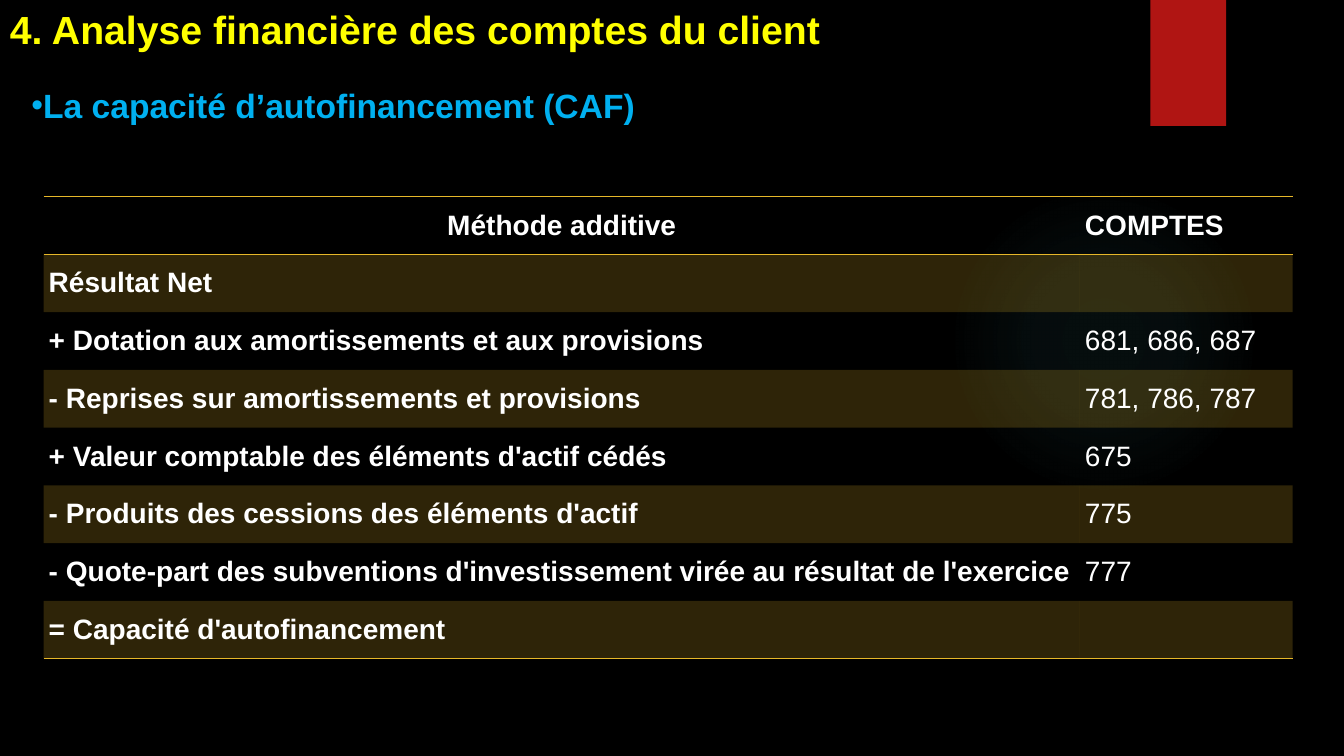
from lxml import etree
from pptx import Presentation
from pptx.dml.color import RGBColor
from pptx.enum.shapes import MSO_SHAPE
from pptx.enum.text import MSO_ANCHOR, PP_ALIGN
from pptx.oxml import parse_xml
from pptx.oxml.ns import nsdecls, qn
from pptx.util import Pt

RECTANGLE, OVAL = MSO_SHAPE.RECTANGLE, MSO_SHAPE.OVAL
MIDDLE = MSO_ANCHOR.MIDDLE
CENTER, LEFT = PP_ALIGN.CENTER, PP_ALIGN.LEFT

BLACK = RGBColor(0x00, 0x00, 0x00)
WHITE = RGBColor(0xFF, 0xFF, 0xFF)
YELLOW = RGBColor(0xFF, 0xFF, 0x00)
BLUE = RGBColor(0x00, 0xB0, 0xF0)
RED = RGBColor(0xB0, 0x15, 0x13)
GOLD = RGBColor(0xE6, 0xB7, 0x29)
TEAL = RGBColor(0x50, 0xB9, 0xC1)

ROWS = [
    ("Méthode additive", "COMPTES"),
    ("Résultat Net", ""),
    ("+ Dotation aux amortissements et aux provisions", "681, 686, 687"),
    ("- Reprises sur amortissements et provisions", "781, 786, 787"),
    ("+ Valeur comptable des éléments d'actif cédés", "675"),
    ("- Produits des cessions des éléments d'actif", "775"),
    ("- Quote-part des subventions d'investissement virée au résultat de l'exercice", "777"),
    ("= Capacité d'autofinancement", ""),
]
COLUMN_WIDTHS = (740.2, 151.9)
ROW_HEIGHT = 41.25
RULED_EDGES = (0, 1, len(ROWS))


def write(text_frame, text, size, color, bold=True):
    text_frame.text = text
    paragraph = text_frame.paragraphs[0]
    for run in paragraph.runs:
        run.font.name = "Arial"
        run.font.size = Pt(size)
        run.font.bold = bold
        run.font.color.rgb = color
    return paragraph


def border(tag, color):
    paint = f'<a:solidFill><a:srgbClr val="{color}"/></a:solidFill>' if color else "<a:noFill/>"
    return parse_xml(f'<a:{tag} {nsdecls("a")} w="12700">{paint}</a:{tag}>')


presentation = Presentation()
presentation.slide_width = Pt(960)
presentation.slide_height = Pt(540)
slide = presentation.slides.add_slide(presentation.slide_layouts[6])
slide.background.fill.solid()
slide.background.fill.fore_color.rgb = BLACK

# Faint round glow
glow = slide.shapes.add_shape(OVAL, Pt(677.5), Pt(131.8), Pt(221.8), Pt(221.8))
glow.shadow.inherit = False
glow.line.fill.background()
stops = "".join(
    f'<a:gs pos="{position * 1000}"><a:srgbClr val="{TEAL}">'
    f'<a:alpha val="{alpha * 1000}"/></a:srgbClr></a:gs>'
    for position, alpha in ((0, 7), (36, 6), (69, 0), (100, 0))
)
gradient = parse_xml(
    f'<a:gradFill {nsdecls("a")} rotWithShape="1"><a:gsLst>{stops}</a:gsLst><a:path path="circle">'
    '<a:fillToRect l="50000" t="50000" r="50000" b="50000"/></a:path></a:gradFill>'
)
glow._element.spPr.find(qn("a:prstGeom")).addnext(gradient)

# Red tab
tab = slide.shapes.add_shape(RECTANGLE, Pt(821.8), Pt(0), Pt(54), Pt(90))
tab.shadow.inherit = False
tab.fill.solid()
tab.fill.fore_color.rgb = RED
tab.line.fill.background()

# Title
title = slide.shapes.add_textbox(Pt(0), Pt(0), Pt(915), Pt(41))
title.text_frame.word_wrap = True
write(title.text_frame, "4. Analyse financière des comptes du client", 28, YELLOW)

# Bulleted subtitle
subtitle = slide.shapes.add_textbox(Pt(15.4), Pt(57), Pt(469), Pt(36))
subtitle.text_frame.word_wrap = True
paragraph = write(subtitle.text_frame, "La capacité d’autofinancement (CAF)", 24, BLUE)
properties = paragraph._p.get_or_add_pPr()
properties.set("marL", "0")
properties.set("indent", "0")
etree.SubElement(properties, qn("a:buFont")).set("typeface", "Arial")
etree.SubElement(properties, qn("a:buChar")).set("char", "•")

# Table of the additive method
frame = slide.shapes.add_table(
    len(ROWS), len(COLUMN_WIDTHS), Pt(31.2), Pt(140.4),
    Pt(sum(COLUMN_WIDTHS)), Pt(ROW_HEIGHT * len(ROWS)),
)
table = frame.table
for column, width in zip(table.columns, COLUMN_WIDTHS):
    column.width = Pt(width)
for row_index, texts in enumerate(ROWS):
    table.rows[row_index].height = Pt(ROW_HEIGHT)
    for column_index, text in enumerate(texts):
        cell = table.cell(row_index, column_index)
        cell.vertical_anchor = MIDDLE
        cell.margin_left = cell.margin_right = Pt(3.6)
        cell.margin_top = cell.margin_bottom = Pt(0)
        is_header = row_index == 0
        paragraph = write(cell.text_frame, text, 20, WHITE, is_header or column_index == 0)
        paragraph.alignment = CENTER if is_header and column_index == 0 else LEFT

        # Translucent bands on odd rows
        if row_index % 2:
            cell.fill.solid()
            cell.fill.fore_color.rgb = GOLD
            color = cell._tc.tcPr.find(qn("a:solidFill"))[0]
            etree.SubElement(color, qn("a:alpha")).set("val", "20000")
        else:
            cell.fill.background()

        # Gold rules above and below the header and under the last row
        top = GOLD if row_index in RULED_EDGES else None
        bottom = GOLD if row_index + 1 in RULED_EDGES else None
        sides = (("lnL", None), ("lnR", None), ("lnT", top), ("lnB", bottom))
        for position, (tag, line_color) in enumerate(sides):
            cell._tc.tcPr.insert(position, border(tag, line_color))

presentation.save("out.pptx")
